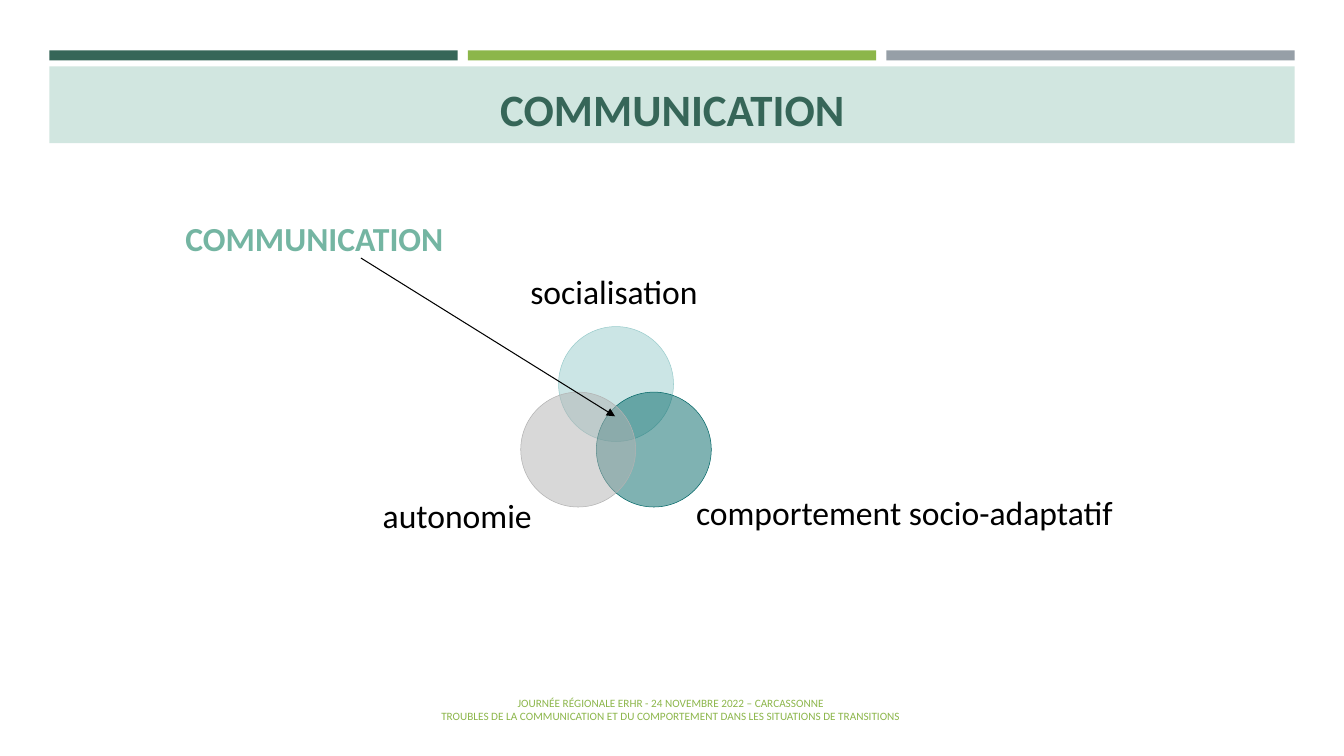
from lxml import etree
from pptx import Presentation
from pptx.dml.color import RGBColor
from pptx.enum import shapes, text
from pptx.oxml.ns import qn
from pptx.util import Inches, Pt

# Content: lengths in inches
WIDTH, HEIGHT = 13.33, 7.5
TITLE = "COMMUNICATION"
CALLOUT = "COMMUNICATION"
FOOTER = [
    "JOURNÉE RÉGIONALE ERHR - 24 NOVEMBRE 2022 – CARCASSONNE",
    "TROUBLES DE LA COMMUNICATION ET DU COMPORTEMENT DANS LES SITUATIONS DE TRANSITIONS",
]
BAR_COLOURS = ["366658", "8CB64A", "969FA7"]
MARGIN, BAR_WIDTH, BAR_STEP = 0.49, 4.05, 4.15
# Circle colour, column and row offset, label, label box
VENN = [
    ("99CCCC", 0, 0, "socialisation", (4.97, 2.61, 2.24, 0.56)),
    ("006666", 1, 1, "comportement socio-adaptatif", (6.82, 4.77, 4.3, 0.63)),
    ("B2B2B2", -1, 1, "autonomie", (3.58, 4.81, 1.91, 0.59)),
]
CIRCLE, VENN_LEFT, VENN_TOP = 1.14, 5.54, 3.24
COLUMN, ROW = 0.375, 0.65
ARROW = (3.58, 2.56, 6.1, 4.13)

prs = Presentation()
prs.slide_width, prs.slide_height = Inches(WIDTH), Inches(HEIGHT)
slide = prs.slides.add_slide(prs.slide_layouts[5])


def colour(value):
    return RGBColor.from_string(value)


def add_filled(preset, box, fill):
    shape = slide.shapes.add_shape(preset, *map(Inches, box))
    shape.shadow.inherit = False
    shape.fill.solid()
    shape.fill.fore_color.rgb = colour(fill)
    shape.line.fill.background()
    return shape


def write(frame, lines, size, fill, bold=False, align=text.PP_ALIGN.CENTER,
          anchor=text.MSO_ANCHOR.MIDDLE, inset=None):
    frame.word_wrap = True
    frame.auto_size = text.MSO_AUTO_SIZE.NONE
    frame.vertical_anchor = anchor
    if inset is not None:
        for side in ("left", "top", "right", "bottom"):
            setattr(frame, f"margin_{side}", Inches(inset))
    for number, line in enumerate(lines):
        paragraph = frame.add_paragraph() if number else frame.paragraphs[0]
        paragraph.alignment = align
        run = paragraph.add_run()
        run.text = line
        run.font.color.rgb = colour(fill)
        for name, value in {"name": "Calibri", "size": Pt(size), "bold": bold}.items():
            setattr(run.font, name, value)


def add_text(box, lines, size, fill, **style):
    write(slide.shapes.add_textbox(*map(Inches, box)).text_frame, lines, size, fill, **style)


# Header bars and title band
for index, bar_colour in enumerate(BAR_COLOURS):
    add_filled(shapes.MSO_SHAPE.RECTANGLE,
               (MARGIN + index * BAR_STEP, 0.5, BAR_WIDTH, 0.1), bar_colour)
band = add_filled(shapes.MSO_SHAPE.RECTANGLE,
                  (MARGIN, 0.66, WIDTH - 2 * MARGIN, 0.76), "D1E6E0")

# Title, placed in front of its band
title = slide.shapes.title
title.left, title.top, title.width, title.height = map(Inches, (0.64, 0.56, 12.06, 0.83))
write(title.text_frame, [TITLE], 32, "366658", bold=True, anchor=text.MSO_ANCHOR.BOTTOM)
band._element.addnext(title._element)

# Overlapping circles and their labels
for circle_colour, column, row, label, label_box in VENN:
    circle = add_filled(shapes.MSO_SHAPE.OVAL,
                        (VENN_LEFT + column * COLUMN, VENN_TOP + row * ROW, CIRCLE, CIRCLE),
                        circle_colour)
    fill_xml = circle._element.spPr.find(qn("a:solidFill"))
    etree.SubElement(fill_xml[0], qn("a:alpha"), val="50000")
    circle.line.color.rgb = colour(circle_colour)
    circle.line.width = Pt(0.37)
    add_text(label_box, [label], 24, "000000", inset=0)

# Arrow to the shared area
arrow = slide.shapes.add_connector(shapes.MSO_CONNECTOR.STRAIGHT, *map(Inches, ARROW))
arrow.line.color.rgb = colour("000000")
arrow.line.width = Pt(0.75)
etree.SubElement(arrow.line._get_or_add_ln(), qn("a:tailEnd"), type="triangle")
etree.SubElement(arrow._element.spPr, qn("a:effectLst"))

# Footer and callout
add_text((0, 6.84, 13.31, 0.4), FOOTER, 8, "8CB64A")
add_text((1.74, 2.11, 3.5, 0.5), [CALLOUT], 24, "74B5A2", bold=True,
         align=text.PP_ALIGN.LEFT, anchor=text.MSO_ANCHOR.TOP)

prs.save("out.pptx")
